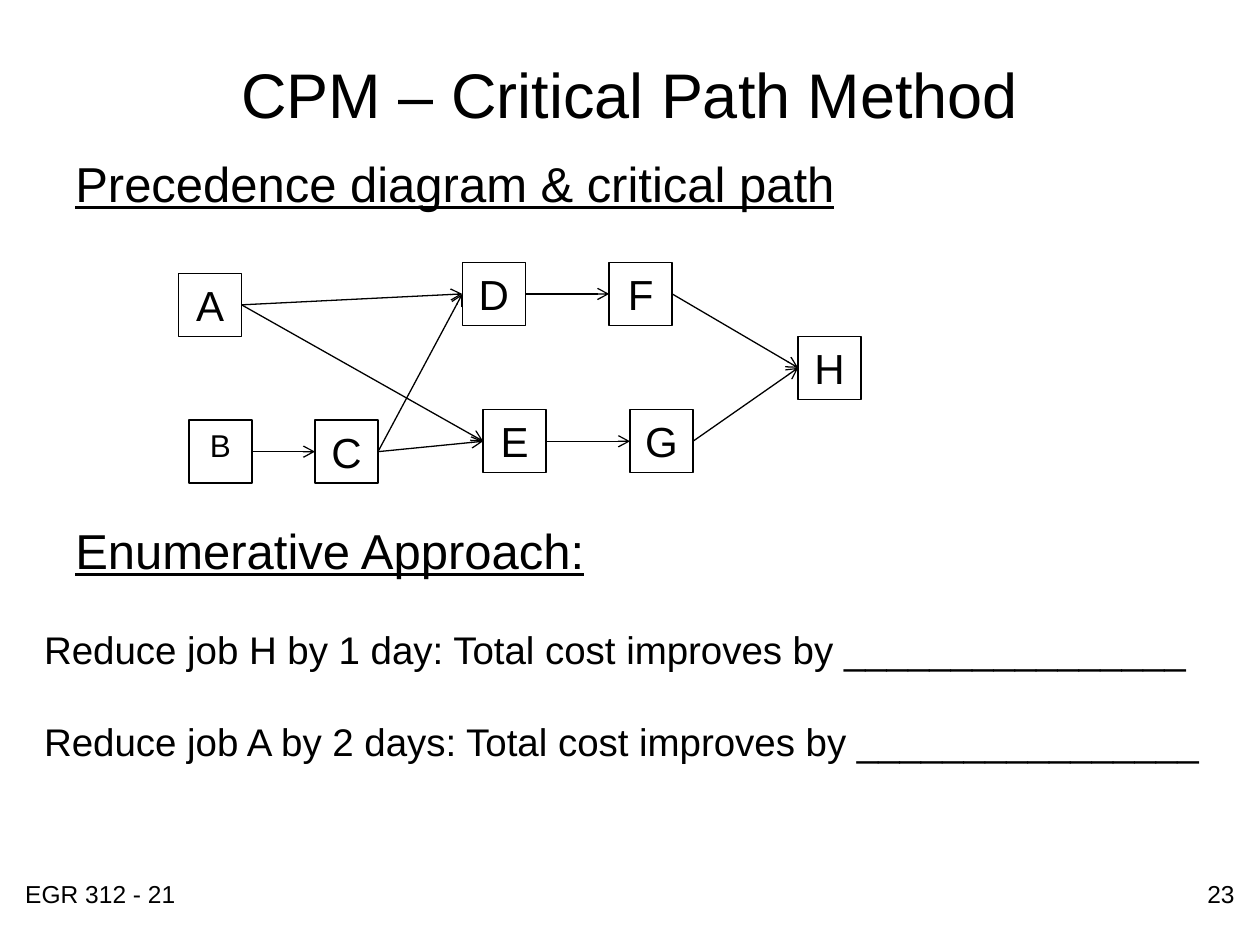
from dataclasses import dataclass

import lxml.etree
import pptx
import pptx.dml.color
import pptx.enum.shapes
import pptx.enum.text
import pptx.oxml.ns
import pptx.util
from pptx.util import Cm

ALIGN = pptx.enum.text.PP_ALIGN
ANCHOR = pptx.enum.text.MSO_ANCHOR
BLACK = "000000"
FONT = "Arial"
LINE_WIDTH = pptx.util.Pt(0.75)
NODE_SIZE = 1.27
RIGHT_SITE, LEFT_SITE = 3, 1


@dataclass(frozen=True)
class Job:
    """A square node; left and top in centimetres."""
    name: str
    left: float
    top: float
    text_size: int = 24


@dataclass(frozen=True)
class TextBlock:
    """A text box; left, top, width and height in centimetres."""
    box: tuple[float, float, float, float]
    lines: tuple[str, ...]
    style: dict


JOBS = [
    Job("A", 3.6, 5.51),
    Job("D", 9.32, 5.29),
    Job("C", 6.35, 8.47),
    Job("B", 3.81, 8.47, 18),
    Job("E", 9.74, 8.26),
    Job("F", 12.28, 5.29),
    Job("G", 12.7, 8.26),
    Job("H", 16.09, 6.78),
]
PRECEDENCES = ["FH", "GH", "DF", "EG", "AD", "BC", "CE", "AE", "CD"]

BLANK_RULE = "_" * 16
TEXT_BLOCKS = [
    TextBlock((0.26, 17.6, 5.92, 1.32), ("EGR 312 - 21",), {"size": 14}),
    TextBlock((19.22, 17.6, 5.92, 1.32), ("23",), {"size": 14, "align": ALIGN.RIGHT}),
    TextBlock((1.9, 0.58, 21.6, 2.62), ("CPM – Critical Path Method",),
              {"size": 36, "align": ALIGN.CENTER, "anchor": ANCHOR.MIDDLE}),
    TextBlock((1.27, 2.97, 22.22, 1.45), ("Precedence diagram & critical path",),
              {"size": 28, "underline": True}),
    TextBlock((1.27, 10.36, 11.43, 1.45), ("Enumerative Approach:",),
              {"size": 28, "underline": True}),
    TextBlock((0.64, 12.5, 24.13, 3.99),
              (f"Reduce job H by 1 day: Total cost improves by {BLANK_RULE}",
               f"Reduce job A by 2 days: Total cost improves by {BLANK_RULE}"),
              {"size": 22, "gap": 26}),
]


def color(hex_value: str) -> pptx.dml.color.RGBColor:
    return pptx.dml.color.RGBColor.from_string(hex_value)


def write_text(shape, *lines: str, size: int, align=ALIGN.LEFT, anchor=ANCHOR.TOP,
               underline: bool = False, gap: float = 0, wrap: bool = True) -> None:
    """Write one paragraph per line, with gap points between paragraphs."""
    frame = shape.text_frame
    frame.word_wrap = wrap
    frame.vertical_anchor = anchor
    for index, line in enumerate(lines):
        paragraph = frame.add_paragraph() if index else frame.paragraphs[0]
        paragraph.alignment = align
        paragraph.space_before = pptx.util.Pt(gap if index else 0)
        run = paragraph.add_run()
        run.text = line
        run.font.name = FONT
        run.font.size = pptx.util.Pt(size)
        run.font.underline = underline
        run.font.color.rgb = color(BLACK)


def add_text_block(slide, block: TextBlock) -> None:
    shape = slide.shapes.add_textbox(*map(Cm, block.box))
    write_text(shape, *block.lines, **block.style)


def add_job(slide, job: Job):
    shape = slide.shapes.add_shape(
        pptx.enum.shapes.MSO_SHAPE.RECTANGLE,
        Cm(job.left), Cm(job.top), Cm(NODE_SIZE), Cm(NODE_SIZE))
    shape.shadow.inherit = False
    shape.fill.background()
    shape.line.color.rgb = color(BLACK)
    shape.line.width = LINE_WIDTH
    write_text(shape, job.name, size=job.text_size, align=ALIGN.CENTER, wrap=False)
    return shape


def add_arrow(slide, before, after) -> None:
    """Join the right side of one job to the left side of the next."""
    connector = slide.shapes.add_connector(
        pptx.enum.shapes.MSO_CONNECTOR.STRAIGHT,
        before.left + before.width, before.top + before.height // 2,
        after.left, after.top + after.height // 2)
    connector.begin_connect(before, RIGHT_SITE)
    connector.end_connect(after, LEFT_SITE)
    connector.line.color.rgb = color(BLACK)
    connector.line.width = LINE_WIDTH
    qn = pptx.oxml.ns.qn
    lxml.etree.SubElement(connector.line._get_or_add_ln(), qn("a:tailEnd"), type="arrow")
    lxml.etree.SubElement(connector._element.spPr, qn("a:effectLst"))


def main() -> None:
    presentation = pptx.Presentation()
    presentation.slide_width = Cm(25.4)
    presentation.slide_height = Cm(19.05)
    slide = presentation.slides.add_slide(presentation.slide_layouts[6])
    for block in TEXT_BLOCKS:
        add_text_block(slide, block)
    nodes = {job.name: add_job(slide, job) for job in JOBS}
    for before, after in PRECEDENCES:
        add_arrow(slide, nodes[before], nodes[after])
    presentation.save("out.pptx")


if __name__ == "__main__":
    main()
